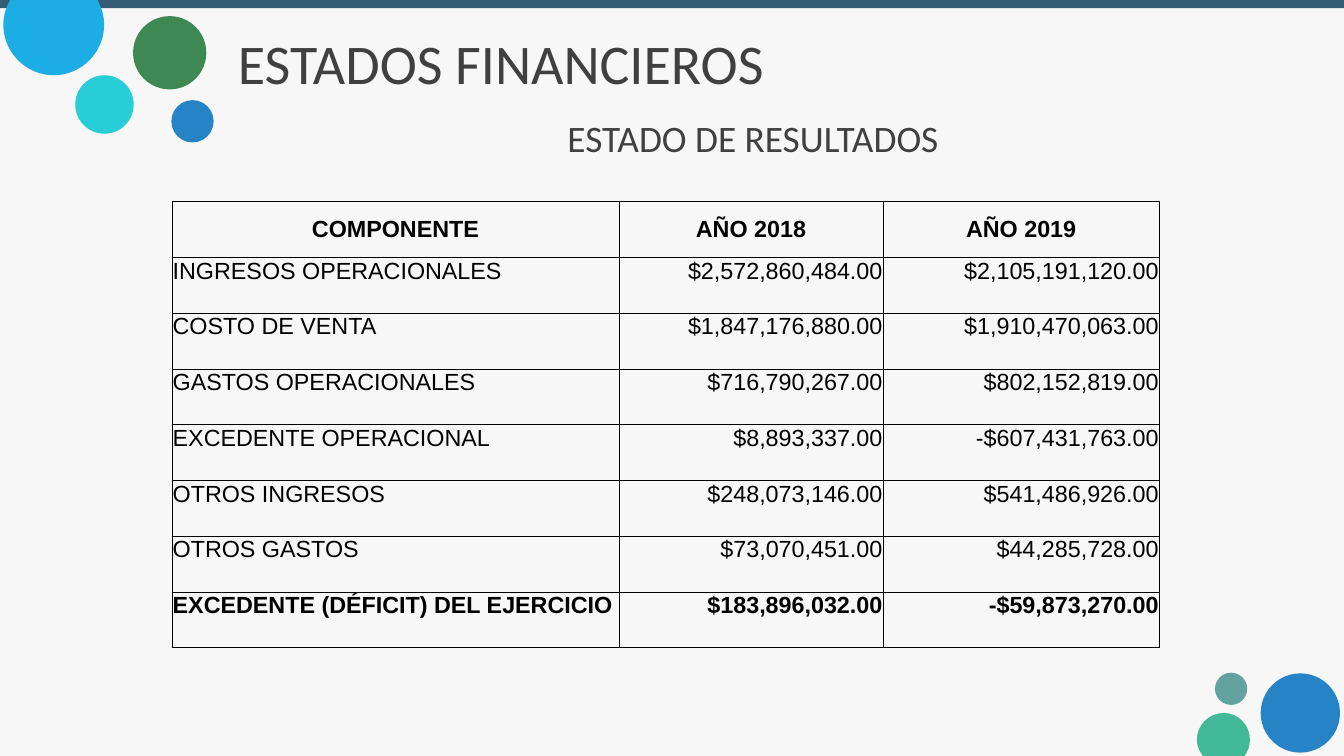
from dataclasses import dataclass

from lxml import etree
from pptx import Presentation
from pptx.dml.color import RGBColor
from pptx.enum.shapes import MSO_SHAPE
from pptx.enum.text import MSO_ANCHOR, PP_ALIGN
from pptx.oxml.ns import qn
from pptx.util import Emu, Pt

LEFT, MID, RIGHT = PP_ALIGN.LEFT, PP_ALIGN.CENTER, PP_ALIGN.RIGHT
TOP, CENTER = MSO_ANCHOR.TOP, MSO_ANCHOR.MIDDLE
RECT, OVAL = MSO_SHAPE.RECTANGLE, MSO_SHAPE.OVAL

UNIT = 9144  # EMU in one px, 100 px to the inch
WIDE, HIGH = 2000, 1125


@dataclass(frozen=True)
class Theme:
    back: str = "F7F7F7"
    bar: str = "335B74"
    head: str = "404040"
    ink: str = "000000"
    blue: str = "2683C6"
    sky: str = "1CADE4"
    aqua: str = "27CED7"
    green: str = "3E8853"
    sage: str = "62A39F"
    mint: str = "42BA97"
    sans: str = "Calibri"
    grid: str = "Arial"
    title: int = 60
    sub: int = 40
    cell: int = 25
    rule: int = 1


@dataclass(frozen=True)
class Dot:
    left: int
    top: int
    size: int
    color: str


@dataclass(frozen=True)
class Cut:
    """A circle cut by the slide edge: each step is a line end or a full curve."""
    start: tuple[int, int]
    steps: list[tuple[int, ...]]
    color: str


@dataclass(frozen=True)
class Label:
    text: str
    top: int
    size: int
    align: PP_ALIGN


@dataclass(frozen=True)
class Row:
    name: str
    past: str
    last: str
    bold: bool = False


THEME = Theme()
DOTS = [
    Dot(255, 149, 63, THEME.blue),
    Cut((15, 0), [
        (145, 0),
        (151, 11, 155, 23, 155, 37),
        (155, 78, 121, 112, 80, 112),
        (39, 112, 5, 78, 5, 37),
        (5, 23, 9, 11, 15, 0),
    ], THEME.sky),
    Dot(112, 112, 87, THEME.aqua),
    Dot(198, 24, 109, THEME.green),
    Dot(1808, 1001, 48, THEME.sage),
    Dot(1876, 1002, 118, THEME.blue),
    Cut((1821, 1061), [
        (1843, 1061, 1860, 1079, 1860, 1101),
        (1860, 1110, 1857, 1118, 1852, 1125),
        (1790, 1125),
        (1785, 1118, 1781, 1110, 1781, 1101),
        (1781, 1079, 1799, 1061, 1821, 1061),
    ], THEME.mint),
]
LABELS = [
    Label("ESTADOS FINANCIEROS", 27, THEME.title, LEFT),
    Label("ESTADO DE RESULTADOS", 139, THEME.sub, MID),
]
COLS = [665, 393, 411]
ROWS = [
    Row("COMPONENTE", "AÑO 2018", "AÑO 2019", True),
    Row("INGRESOS OPERACIONALES", "$2,572,860,484.00", "$2,105,191,120.00"),
    Row("COSTO DE VENTA", "$1,847,176,880.00", "$1,910,470,063.00"),
    Row("GASTOS OPERACIONALES", "$716,790,267.00", "$802,152,819.00"),
    Row("EXCEDENTE OPERACIONAL", "$8,893,337.00", "-$607,431,763.00"),
    Row("OTROS INGRESOS", "$248,073,146.00", "$541,486,926.00"),
    Row("OTROS GASTOS", "$73,070,451.00", "$44,285,728.00"),
    Row("EXCEDENTE (DÉFICIT) DEL EJERCICIO", "$183,896,032.00", "-$59,873,270.00", True),
]


def px(size: int) -> Emu:
    return Emu(size * UNIT)


def paint(shape, color: str) -> None:
    shape.shadow.inherit = False
    shape.fill.solid()
    shape.fill.fore_color.rgb = RGBColor.from_string(color)
    shape.line.fill.background()


def add_dot(slide, dot: Dot) -> None:
    shape = slide.shapes.add_shape(
        OVAL, px(dot.left), px(dot.top), px(dot.size), px(dot.size))
    paint(shape, dot.color)


def add_cut(slide, cut: Cut) -> None:
    """Build the outline from its end points, then bend the curved steps."""
    ends = [step[-2:] for step in cut.steps]
    pen = slide.shapes.build_freeform(*cut.start, scale=UNIT)
    pen.add_line_segments(ends, close=True)
    shape = pen.convert_to_shape()
    left = min(x for x, _ in ends)
    top = min(y for _, y in ends)
    lines = list(shape._element.iter(qn("a:lnTo")))
    for line, step in zip(lines, cut.steps):
        if len(step) == 2:
            continue
        line.tag = qn("a:cubicBezTo")
        for slot, (x, y) in enumerate((step[:2], step[2:4])):
            point = etree.Element(qn("a:pt"), x=str(x - left), y=str(y - top))
            line.insert(slot, point)
    paint(shape, cut.color)


def add_run(para, text: str, font: str, size: int, color: str, bold: bool = False) -> None:
    run = para.add_run()
    run.text = text
    run.font.name = font
    run.font.size = Pt(size)
    run.font.bold = bold
    run.font.color.rgb = RGBColor.from_string(color)


def add_label(slide, label: Label) -> None:
    box = slide.shapes.add_textbox(px(336), px(label.top), px(1569), px(132))
    frame = box.text_frame
    frame.word_wrap = True
    frame.vertical_anchor = CENTER
    frame.margin_left = frame.margin_right = px(18)
    frame.margin_top = frame.margin_bottom = px(9)
    para = frame.paragraphs[0]
    para.alignment = label.align
    add_run(para, label.text, THEME.sans, label.size, THEME.head)


def add_edges(cell) -> None:
    props = cell._tc.get_or_add_tcPr()
    for side in ("a:lnL", "a:lnR", "a:lnT", "a:lnB"):
        line = etree.SubElement(props, qn(side), w=str(Pt(THEME.rule)))
        fill = etree.SubElement(line, qn("a:solidFill"))
        etree.SubElement(fill, qn("a:srgbClr"), val=THEME.ink)


def fill_cell(cell, text: str, align: PP_ALIGN, anchor: MSO_ANCHOR, bold: bool) -> None:
    add_edges(cell)
    cell.fill.background()
    cell.margin_left = cell.margin_right = cell.margin_top = px(1)
    cell.margin_bottom = px(0)
    cell.vertical_anchor = anchor
    para = cell.text_frame.paragraphs[0]
    para.alignment = align
    add_run(para, text, THEME.grid, THEME.cell, THEME.ink, bold)


def add_grid(slide) -> None:
    tall = 83
    table = slide.shapes.add_table(
        len(ROWS), len(COLS), px(256), px(300), px(sum(COLS)), px(tall * len(ROWS))).table
    table.first_row = table.horz_banding = False
    for col, width in zip(table.columns, COLS):
        col.width = px(width)
    for index, row in enumerate(ROWS):
        aligns = (LEFT, RIGHT, RIGHT) if index else (MID, MID, MID)
        anchor = TOP if index else CENTER
        texts = (row.name, row.past, row.last)
        for cell, text, align in zip(table.rows[index].cells, texts, aligns):
            fill_cell(cell, text, align, anchor, row.bold)


def main() -> None:
    deck = Presentation()
    deck.slide_width, deck.slide_height = px(WIDE), px(HIGH)
    slide = deck.slides.add_slide(deck.slide_layouts[6])
    back = slide.background.fill
    back.solid()
    back.fore_color.rgb = RGBColor.from_string(THEME.back)
    paint(slide.shapes.add_shape(RECT, 0, 0, px(WIDE), px(12)), THEME.bar)
    for dot in DOTS:
        (add_cut if isinstance(dot, Cut) else add_dot)(slide, dot)
    for label in LABELS:
        add_label(slide, label)
    add_grid(slide)
    deck.save("out.pptx")


if __name__ == "__main__":
    main()
